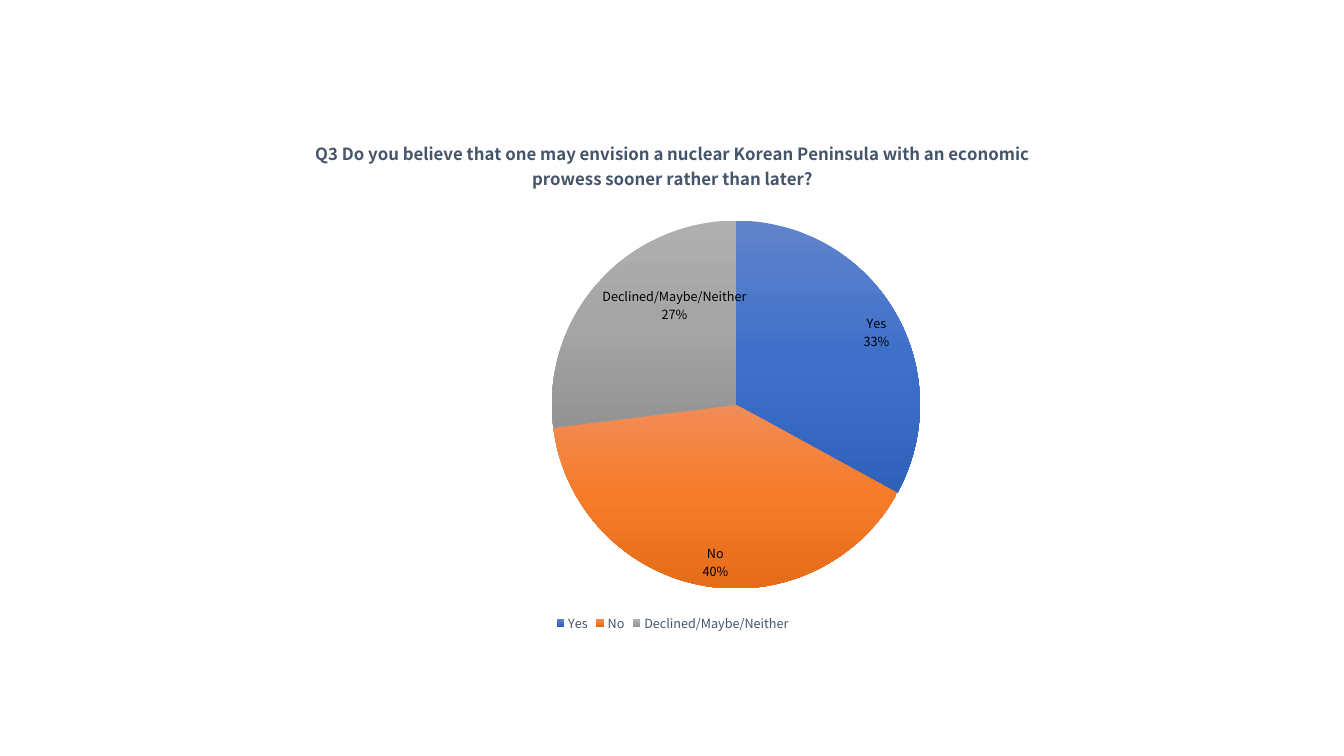
import copy

import pptx
import pptx.chart.data
import pptx.dml.color
import pptx.enum.chart
import pptx.oxml
import pptx.oxml.ns
import pptx.util
from pptx.util import Inches

QUESTION = ("Q3 Do you believe that one may envision a nuclear Korean Peninsula "
            "with an economic prowess sooner rather than later?")
ANSWERS = [
    ("Yes", 33, ("6183CB", "3E70CA", "3062BB")),
    ("No", 40, ("F18C57", "F67B28", "E56C19")),
    ("Declined/Maybe/Neither", 27, ("AFAFAF", "A5A5A5", "939393")),
]
FONT = "Noto Sans CJK KR"
SLATE, BLACK = "44546A", "000000"
CHART_BOX = (2.14, 1.19, 9.06, 5.12)
PIE_LEFT, PIE_TOP, PIE_SIZE = 5.47, 2.19, 3.65


def rgb(value):
    return pptx.dml.color.RGBColor.from_string(value)


def style(font, size, color, bold=False):
    font.name = FONT
    font.size = pptx.util.Pt(size)
    font.bold = bold
    font.color.rgb = rgb(color)


def shade(slice_format, colors):
    fill = slice_format.fill
    fill.gradient()
    fill.gradient_angle = 270
    first_stop = fill.gradient_stops[0]._gs
    first_stop.addnext(copy.deepcopy(first_stop))
    for stop, position, color in zip(fill.gradient_stops, (0, 0.5, 1), colors):
        stop.position = position
        stop.color.rgb = rgb(color)
    slice_format.line.fill.background()


def place_pie(plot_area):
    left, top, width, height = CHART_BOX
    fractions = {"x": (PIE_LEFT - left) / width, "y": (PIE_TOP - top) / height,
                 "w": PIE_SIZE / width, "h": PIE_SIZE / height}
    modes = '<c:layoutTarget val="inner"/><c:xMode val="edge"/><c:yMode val="edge"/>'
    values = "".join(f'<c:{key} val="{value:.3f}"/>' for key, value in fractions.items())
    layout = pptx.oxml.parse_xml(
        f'<c:layout {pptx.oxml.ns.nsdecls("c")}><c:manualLayout>{modes}{values}'
        '</c:manualLayout></c:layout>')
    for automatic in plot_area.findall(pptx.oxml.ns.qn("c:layout")):
        plot_area.remove(automatic)
    plot_area.insert(0, layout)


deck = pptx.Presentation()
deck.slide_width, deck.slide_height = Inches(13.33), Inches(7.5)
slide = deck.slides.add_slide(deck.slide_layouts[6])

survey = pptx.chart.data.CategoryChartData(number_format="0")
survey.categories = [answer for answer, _, _ in ANSWERS]
survey.add_series(QUESTION, [share for _, share, _ in ANSWERS])
chart = slide.shapes.add_chart(
    pptx.enum.chart.XL_CHART_TYPE.PIE, *map(Inches, CHART_BOX), survey).chart
style(chart.font, 10, BLACK)

chart.has_title = True
chart.chart_title.include_in_layout = False
heading = chart.chart_title.text_frame
heading.text = QUESTION
style(heading.paragraphs[0].runs[0].font, 12, SLATE, bold=True)

chart.has_legend = True
chart.legend.position = pptx.enum.chart.XL_LEGEND_POSITION.BOTTOM
chart.legend.include_in_layout = False
style(chart.legend.font, 9, SLATE)

pie = chart.plots[0]
pie.vary_by_categories = True
for index, (_, _, colors) in enumerate(ANSWERS):
    shade(pie.series[0].points[index].format, colors)

labels = pie.series[0].data_labels
labels.show_category_name = True
labels.show_percentage = True
labels.show_value = False
labels.number_format = "0%"
labels.number_format_is_linked = False
labels.position = pptx.enum.chart.XL_LABEL_POSITION.INSIDE_END
style(labels.font, 9, BLACK)

place_pie(chart._chartSpace.chart.plotArea)
deck.save("out.pptx")
